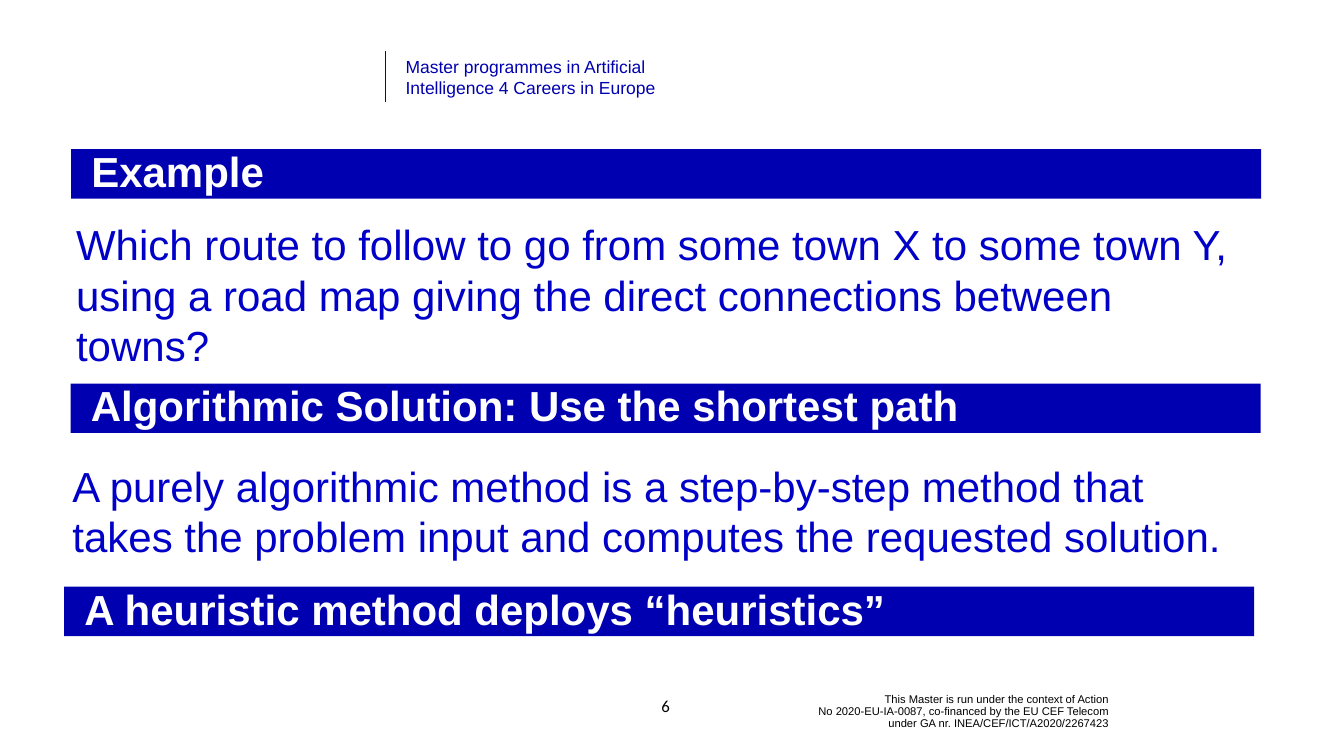
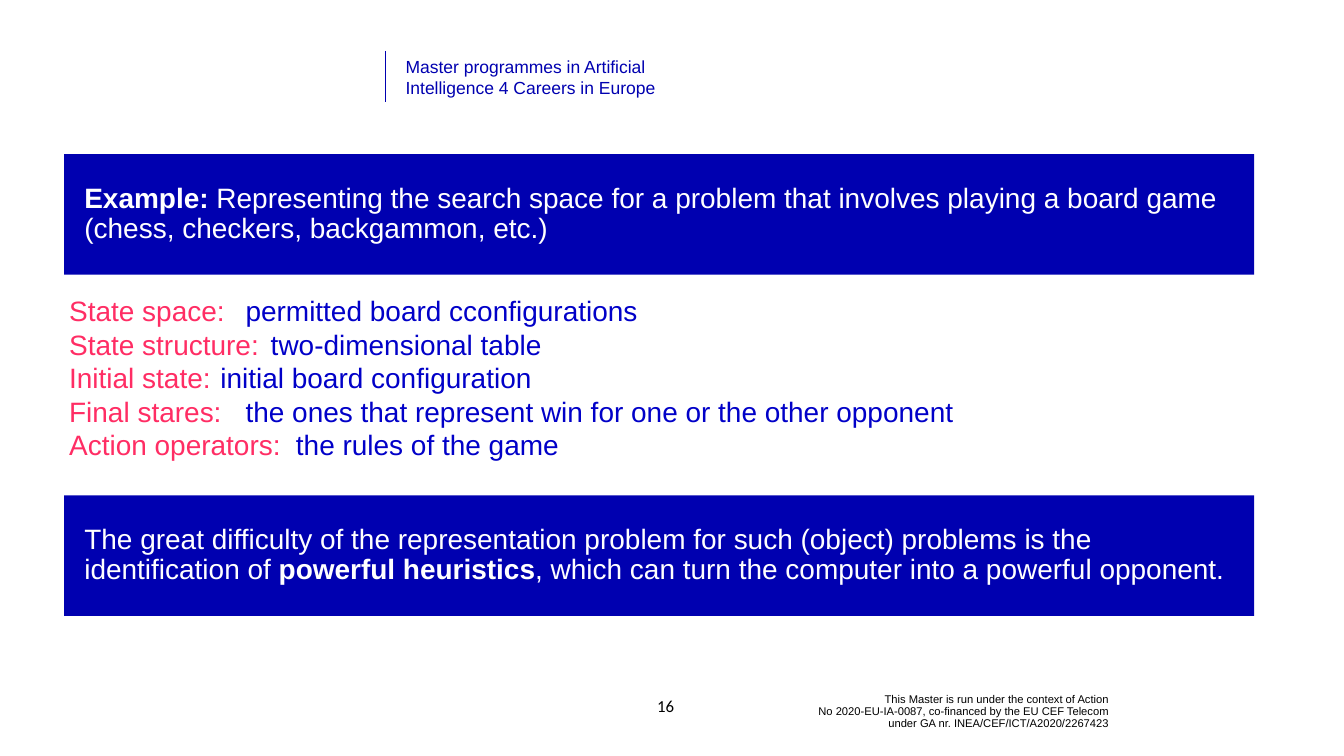
"""Build two slides on algorithmic and heuristic problem solving."""
from copy import deepcopy

from lxml.etree import SubElement
from pptx import Presentation
from pptx.dml.color import RGBColor as RGB
from pptx.enum.shapes import MSO_CONNECTOR as CONN, MSO_SHAPE as SHAPE
from pptx.enum.text import MSO_ANCHOR as ANCHOR, MSO_AUTO_SIZE as FIT, PP_ALIGN as ALIGN
from pptx.oxml.ns import qn
from pptx.util import Cm, Pt

COLORS = {"band": "0000B0", "text": "0100C8", "label": "FF2D64", "white": "FFFFFF", "black": "000000"}
BAND_W = 59.97
HEADER = "Master programmes in Artificial\nIntelligence 4 Careers in Europe"
FOOTER = ("This Master is run under the context of Action\n"
          "No 2020-EU-IA-0087, co-financed by the EU CEF Telecom\n"
          "under GA nr. INEA/CEF/ICT/A2020/2267423")


def write(sp, paras, size, spacing=1.0, align=ALIGN.LEFT, anchor=ANCHOR.TOP, font="Arial", tab=None):
    """Fill a shape with paragraphs of (text, colour, bold) runs."""
    tf = sp.text_frame
    tf.word_wrap, tf.auto_size, tf.vertical_anchor = True, FIT.NONE, anchor
    for i, runs in enumerate(paras):
        p = tf.add_paragraph() if i else tf.paragraphs[0]
        p.alignment, p.line_spacing, p.space_before = align, spacing, Pt(0)
        pPr = p._p.get_or_add_pPr()
        pPr.set("marL", "0")
        pPr.set("indent", "0")
        SubElement(pPr, qn("a:buNone"))
        if tab:
            SubElement(SubElement(pPr, qn("a:tabLst")), qn("a:tab"), pos=str(Cm(tab)), algn="l")
        for text, color, bold in runs:
            for j, line in enumerate(text.split("\n")):
                if j:
                    p.add_line_break()
                r = p.add_run()
                r.text = line
                r.font.name, r.font.size, r.font.bold = font, Pt(size), bold
                r.font.color.rgb = RGB.from_string(COLORS[color])
        for br in p._p.findall(qn("a:br")):
            br.append(deepcopy(p.runs[0]._r.rPr))


def band(sp, x, y, h, runs, size):
    """Turn a shape into a blue band with white (text, bold) runs."""
    sp.left, sp.top, sp.width, sp.height = Cm(x), Cm(y), Cm(BAND_W), Cm(h)
    sp.fill.solid()
    sp.fill.fore_color.rgb = RGB.from_string(COLORS["band"])
    sp.line.fill.background()
    sp.text_frame.margin_left = Cm(1.02)
    write(sp, [[(t, "white", b) for t, b in runs]], size, 0.9, anchor=ANCHOR.MIDDLE)


prs = Presentation()
prs.slide_width, prs.slide_height = Cm(67.73), Cm(38.1)
layout = prs.slide_layouts[1]

pages = []
for number in (6, 16):
    s = prs.slides.add_slide(layout)
    pages.append(s)
    sp = s.shapes.add_textbox(Cm(32.13), Cm(34.57), Cm(2.82), Cm(2.03))
    write(sp, [[(str(number), "black", False)]], 24, align=ALIGN.CENTER, anchor=ANCHOR.MIDDLE, font="Calibri")

s = pages[0]
footer = s.shapes.add_textbox(Cm(38.15), Cm(34.9), Cm(17.98), Cm(1.93))
write(footer, [[(FOOTER, "black", False)]], 16, 0.9, ALIGN.RIGHT, ANCHOR.MIDDLE)
rule = s.shapes.add_connector(CONN.STRAIGHT, Cm(19.43), Cm(2.57), Cm(19.43), Cm(5.16))
rule.line.color.rgb = RGB.from_string(COLORS["band"])
rule.line.width = Pt(0.5)
SubElement(rule.element.spPr, qn("a:effectLst"))
header = s.shapes.add_textbox(Cm(20.19), Cm(2.69), Cm(16.18), Cm(2.39))
write(header, [[(HEADER, "band", False)]], 25)
for i, sp in enumerate((footer, rule, header)):
    sp.element.xpath(".//p:cNvPr")[0].set("id", str(20 + i))
    layout.shapes.element.append(sp.element)

band(s.shapes.title, 3.58, 7.52, 2.49, [("Example", True)], 60)
for x, y, text in ((3.56, 19.33, "Algorithmic Solution: Use the shortest path"),
                   (3.23, 29.57, "A heuristic method deploys “heuristics”")):
    sp = s.shapes.add_shape(SHAPE.RECTANGLE, 0, 0, 0, 0)
    sp.shadow.inherit = False
    band(sp, x, y, 2.49, [(text, True)], 60)
question = s.placeholders[1]
method = s.shapes.add_textbox(0, 0, 0, 0)
for sp, x, y, h, text in (
        (question, 3.58, 10.9, 7.95, "Which route to follow to go from some town X to some town Y, "
         "using a road map giving the direct connections between towns?"),
        (method, 3.4, 23.06, 5.38, "A purely algorithmic method is a step-by-step method that "
         "takes the problem input and computes the requested solution.")):
    sp.left, sp.top, sp.width, sp.height = Cm(x), Cm(y), Cm(BAND_W), Cm(h)
    write(sp, [[(text, "text", False)]], 60)

s = pages[1]
band(s.shapes.title, 3.23, 7.77, 6.07, [
    ("Example:", True),
    (" Representing the search space for a problem that involves playing a board game "
     "(chess, checkers, backgammon, etc.)", False)], 40)
sp = s.placeholders[1]
sp.left, sp.top, sp.width, sp.height = Cm(3.23), Cm(14.66), Cm(BAND_W), Cm(8.81)
sp.fill.solid()
sp.fill.fore_color.rgb = RGB.from_string(COLORS["white"])
terms = [("State space:", "permitted board cconfigurations"),
         ("State structure:", "two-dimensional table"),
         ("Initial state:", "initial board configuration"),
         ("Final stares:", "the ones that represent win for one or the other opponent"),
         ("Action operators:", "the rules of the game")]
write(sp, [[(k + "\t", "label", False), (v, "text", False)] for k, v in terms], 40, tab=12.7)
sp = s.shapes.add_shape(SHAPE.RECTANGLE, 0, 0, 0, 0)
sp.shadow.inherit = False
band(sp, 3.23, 24.97, 6.07, [
    ("The great difficulty of the representation problem for such (object) problems is the "
     "identification of ", False),
    ("powerful heuristics", True),
    (", which can turn the computer into a powerful opponent.", False)], 40)

prs.save("out.pptx")
